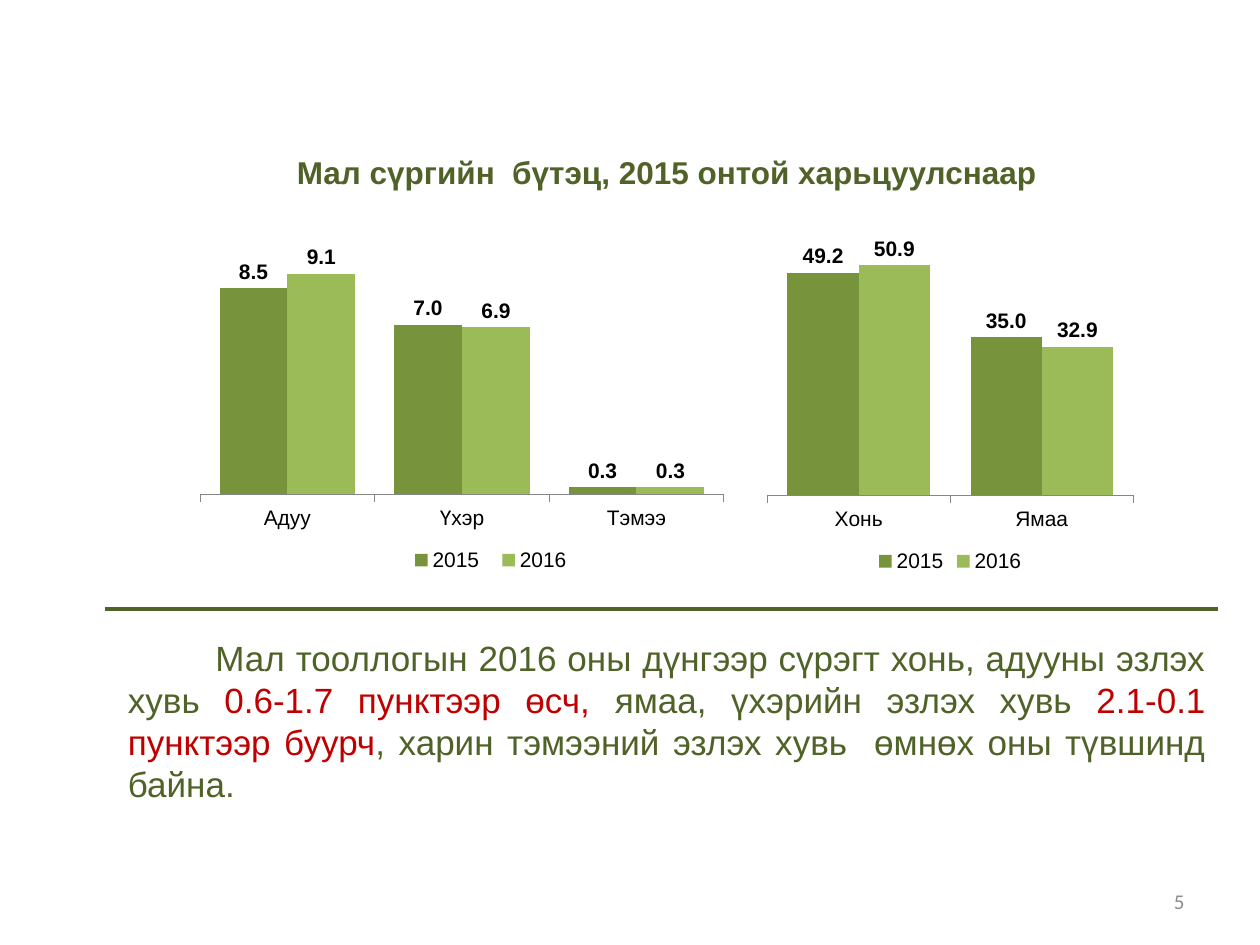
from typing import NamedTuple, Optional

from lxml import etree
from pptx import Presentation
from pptx.chart import data as chart_data
from pptx.dml import color
from pptx.enum import chart as ch, text
from pptx.enum import shapes as kinds
from pptx.oxml import ns
from pptx.util import Pt

DARK_GREEN = "4F6228"
RED = "C00000"
SERIES_COLORS = ("77933C", "9BBB59")


class Box(NamedTuple):
    left: float
    top: float
    width: float
    height: float

    def lengths(self) -> list:
        return [Pt(value) for value in self]


class HerdChart(NamedTuple):
    box: Box
    animals: tuple
    shares_2015: tuple
    shares_2016: tuple
    maximum: int
    plot: Box
    legend: Optional[Box] = None


HERD_CHARTS = (
    HerdChart(Box(114, 138, 300, 198), ("Адуу", "Үхэр", "Тэмээ"),
              (8.5, 7.0, 0.3), (9.1, 6.9, 0.3), 10,
              Box(0, 0.03, 1, 0.7), Box(0.38, 0.87, 0.35, 0.1)),
    HerdChart(Box(438, 126, 210, 204), ("Хонь", "Ямаа"),
              (49.2, 35.0), (50.9, 32.9), 60, Box(0, 0.01, 1, 0.76)),
)

SUMMARY = (
    ("Мал тооллогын 2016 оны дүнгээр сүрэгт хонь, адууны эзлэх хувь ", DARK_GREEN),
    ("0.6-1.7 пунктээр өсч, ", RED),
    ("ямаа, үхэрийн эзлэх хувь ", DARK_GREEN),
    ("2.1-0.1 пунктээр буурч", RED),
    (", харин тэмээний эзлэх хувь  өмнөх оны түвшинд байна.", DARK_GREEN),
)


def rgb(value: str) -> color.RGBColor:
    return color.RGBColor.from_string(value)


def set_font(font, size: float, value: str, name: str = "Arial", bold: bool = False) -> None:
    font.name = name
    font.size = Pt(size)
    font.bold = bold
    font.color.rgb = rgb(value)


def place(shape, box: Box) -> None:
    shape.left, shape.top, shape.width, shape.height = box.lengths()


def add_text_box(slide, box: Box, anchor):
    frame = slide.shapes.add_textbox(*box.lengths()).text_frame
    frame.word_wrap = True
    frame.vertical_anchor = anchor
    return frame.paragraphs[0]


def set_layout(parent, area: Box, inner: bool = False) -> None:
    for old in parent.findall(ns.qn("c:layout")):
        parent.remove(old)
    layout = etree.Element(ns.qn("c:layout"))
    manual = etree.SubElement(layout, ns.qn("c:manualLayout"))
    settings = [("layoutTarget", "inner")] if inner else []
    settings += [("xMode", "edge"), ("yMode", "edge")]
    settings += zip("xywh", area)
    for tag, value in settings:
        etree.SubElement(manual, ns.qn(f"c:{tag}")).set("val", str(value))
    parent.insert(0 if inner else 1, layout)


def add_herd_chart(slide, herd: HerdChart) -> None:
    shares = chart_data.CategoryChartData(number_format="###0.0")
    shares.categories = herd.animals
    shares.add_series("2015", herd.shares_2015)
    shares.add_series("2016", herd.shares_2016)
    chart = slide.shapes.add_chart(
        ch.XL_CHART_TYPE.COLUMN_CLUSTERED, *herd.box.lengths(), shares).chart
    set_font(chart.font, 12, "000000")
    chart.has_title = False
    chart.has_legend = True
    chart.legend.position = ch.XL_LEGEND_POSITION.BOTTOM
    chart.legend.include_in_layout = False

    animals = chart.category_axis
    animals.major_tick_mark = ch.XL_TICK_MARK.OUTSIDE
    animals.format.line.color.rgb = rgb("868686")
    values = chart.value_axis
    values.minimum_scale = 0
    values.maximum_scale = herd.maximum
    values.has_major_gridlines = False
    values.visible = False

    plot = chart.plots[0]
    plot.gap_width = 57
    plot.overlap = 0
    plot.vary_by_categories = False
    for series, fill in zip(plot.series, SERIES_COLORS):
        series.format.fill.solid()
        series.format.fill.fore_color.rgb = rgb(fill)
        labels = series.data_labels
        labels.show_value = True
        labels.number_format = "###0.0"
        labels.number_format_is_linked = False
        labels.position = ch.XL_LABEL_POSITION.OUTSIDE_END
        set_font(labels.font, 12, "000000", bold=True)

    set_layout(chart.element.find(".//" + ns.qn("c:plotArea")), herd.plot, inner=True)
    if herd.legend:
        set_layout(chart.element.find(".//" + ns.qn("c:legend")), herd.legend)


def add_divider(slide) -> None:
    divider = slide.shapes.add_connector(
        kinds.MSO_CONNECTOR.STRAIGHT, Pt(60), Pt(348), Pt(696), Pt(348))
    divider.line.color.rgb = rgb(DARK_GREEN)
    divider.line.width = Pt(2.25)
    etree.SubElement(divider.element.spPr, ns.qn("a:effectLst"))


def add_summary(slide) -> None:
    summary = add_text_box(slide, Box(66, 360, 630, 104.4), text.MSO_ANCHOR.TOP)
    for words, value in SUMMARY:
        run = summary.add_run()
        run.text = words
        run.font.color.rgb = rgb(value)
    summary.alignment = text.PP_ALIGN.JUSTIFY
    summary._p.get_or_add_pPr().set("indent", str(Pt(50)))
    summary.font.name = "Arial"
    summary.font.size = Pt(20)


def main() -> None:
    deck = Presentation()
    deck.slide_width, deck.slide_height = Pt(720), Pt(540)
    slide = deck.slides.add_slide(deck.slide_layouts[5])

    title = slide.shapes.title
    place(title, Box(60, 84, 642, 29))
    title.text_frame.text = "Мал сүргийн  бүтэц, 2015 онтой харьцуулснаар"
    title.text_frame.auto_size = text.MSO_AUTO_SIZE.NONE
    title.text_frame.vertical_anchor = text.MSO_ANCHOR.TOP
    heading = title.text_frame.paragraphs[0]
    heading.alignment = text.PP_ALIGN.CENTER
    set_font(heading.font, 18, DARK_GREEN, bold=True)

    add_divider(slide)
    add_summary(slide)
    for herd in HERD_CHARTS:
        add_herd_chart(slide, herd)

    page_number = add_text_box(slide, Box(516, 500.5, 168, 28.8), text.MSO_ANCHOR.MIDDLE)
    page_number.text = "5"
    page_number.alignment = text.PP_ALIGN.RIGHT
    set_font(page_number.font, 12, "8C8C8C", name="Calibri")

    deck.save("out.pptx")


if __name__ == "__main__":
    main()
